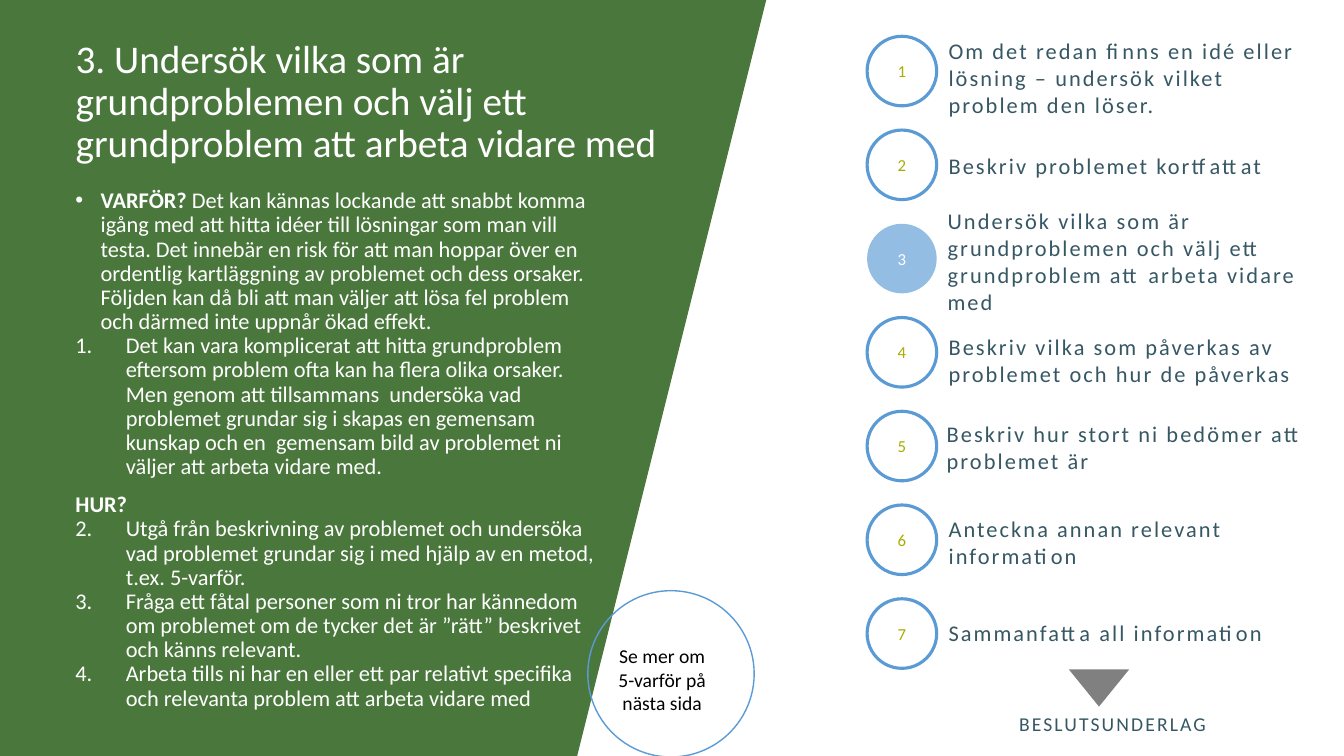
import pptx
import pptx.util
import pptx.dml.color
import pptx.enum.shapes
import pptx.enum.text
import pptx.oxml.ns
import lxml.etree

Inches = pptx.util.Inches
Pt = pptx.util.Pt
Shape = pptx.enum.shapes.MSO_SHAPE
Align = pptx.enum.text.PP_ALIGN
Anchor = pptx.enum.text.MSO_ANCHOR
qn = pptx.oxml.ns.qn

COLOURS = {
    "green": "4A773C",
    "blue": "5B9BD5",
    "slate": "365764",
    "lime": "A8AD00",
    "grey": "808080",
    "white": "FFFFFF",
    "black": "000000",
}

TITLE = "3. Undersök vilka som är grundproblemen och välj ett grundproblem att arbeta vidare med"

BODY = [
    ("dot", "VARFÖR? ", "Det kan kännas lockande att snabbt komma igång med att hitta idéer till lösningar som man vill testa. Det innebär en risk för att man hoppar över en ordentlig kartläggning av problemet och dess orsaker. Följden kan då bli att man väljer att lösa fel problem och därmed inte uppnår ökad effekt."),
    (1, "", "Det kan vara komplicerat att hitta grundproblem eftersom problem ofta kan ha flera olika orsaker. Men genom att tillsammans  undersöka vad problemet grundar sig i skapas en gemensam kunskap och en  gemensam bild av problemet ni väljer att arbeta vidare med."),
    (None, "HUR?", ""),
    (2, "", "Utgå från beskrivning av problemet och undersöka vad problemet grundar sig i med hjälp av en metod, t.ex. 5-varför."),
    (2, "", "Fråga ett fåtal personer som ni tror har kännedom om problemet om de tycker det är ”rätt” beskrivet och känns relevant."),
    (2, "", "Arbeta tills ni har en eller ett par relativt specifika och relevanta problem att arbeta vidare med"),
]

STEPS = [
    (9.31, 0.32, 3.8, 0.91, "Om det redan finns en idé eller lösning – undersök vilket problem den löser."),
    (9.31, 1.46, 3.46, 0.37, "Beskriv problemet kortfattat"),
    (9.3, 2.01, 3.88, 1.45, "Undersök vilka som är grundproblemen och välj ett grundproblem att arbeta vidare med"),
    (9.31, 3.26, 3.87, 0.64, "Beskriv vilka som påverkas av problemet och hur de påverkas"),
    (9.29, 4.12, 3.82, 0.64, "Beskriv hur stort ni bedömer att problemet är"),
    (9.31, 5.06, 3.82, 0.64, "Anteckna annan relevant information"),
    (9.31, 6.09, 3.8, 0.37, "Sammanfatta all information"),
]
CURRENT_STEP = 3
FIRST_TOP, STEP_GAP = 0.36, 0.93


class SlideBuilder:
    font = "Calibri"

    def __init__(self, page):
        self.page = page

    def colour(self, name):
        return pptx.dml.color.RGBColor.from_string(COLOURS[name])

    def style(self, para, size, colour, align=Align.LEFT, spacing=None):
        para.alignment = align
        para.font.name = self.font
        para.font.size = Pt(size)
        para.font.color.rgb = self.colour(colour)
        if spacing:
            para.font._element.set("spc", str(int(spacing * 100)))

    def title(self, box, text):
        title = self.page.shapes.title
        title.left, title.top, title.width, title.height = map(Inches, box)
        frame = title.text_frame
        frame.text = text
        frame.auto_size = pptx.enum.text.MSO_AUTO_SIZE.NONE
        frame.vertical_anchor = Anchor.BOTTOM
        self.style(frame.paragraphs[0], 28, "white")
        frame.paragraphs[0].line_spacing = 0.9

    def shape(self, kind, box, fill=None, line=None, weight=1, opacity=None):
        shape = self.page.shapes.add_shape(kind, *map(Inches, box))
        shape.shadow.inherit = False
        if fill:
            shape.fill.solid()
            shape.fill.fore_color.rgb = self.colour(fill)
        else:
            shape.fill.background()
        if opacity:
            tint = shape.fill._xPr.find(qn("a:solidFill"))[0]
            lxml.etree.SubElement(tint, qn("a:alpha"), val=str(opacity * 1000))
        if line:
            shape.line.color.rgb = self.colour(line)
            shape.line.width = Pt(weight)
        else:
            shape.line.fill.background()
        return shape

    def send_to_back(self, shape):
        self.page.shapes._spTree.insert(2, shape._element)

    def text(self, box, lines, size, colour, align=Align.LEFT, spacing=None):
        frame = self.page.shapes.add_textbox(*map(Inches, box)).text_frame
        frame.word_wrap = True
        frame.text = "\n".join(lines)
        for para in frame.paragraphs:
            self.style(para, size, colour, align, spacing)

    def number(self, number, left, top, active):
        circle = self.shape(
            Shape.OVAL, (left, top, 0.69, 0.69),
            "blue" if active else "white", None if active else "blue", 2.25, 65)
        frame = circle.text_frame
        frame.vertical_anchor = Anchor.MIDDLE
        frame.text = str(number)
        self.style(frame.paragraphs[0], 12, "white" if active else "lime", Align.CENTER)

    def bullet(self, para, marker):
        props = para._p.get_or_add_pPr()
        indent = 0.25 if marker == "dot" else 0.5
        props.set("marL", str(Inches(indent)))
        props.set("indent", str(-Inches(indent)))
        if marker == "dot":
            lxml.etree.SubElement(props, qn("a:buFont"), typeface="Arial")
            lxml.etree.SubElement(props, qn("a:buChar"), char="•")
        else:
            lxml.etree.SubElement(
                props, qn("a:buAutoNum"), type="arabicPeriod", startAt=str(marker))

    def body(self, box, items):
        frame = self.page.shapes.add_textbox(*map(Inches, box)).text_frame
        frame.word_wrap = True
        for index, (marker, strong, plain) in enumerate(items):
            para = frame.add_paragraph() if index else frame.paragraphs[0]
            para.line_spacing = 0.9
            para.space_before = Pt(0 if isinstance(marker, int) else 10)
            if marker:
                self.bullet(para, marker)
            self.style(para, 16, "white")
            for words, bold in ((strong, True), (plain, False)):
                if words:
                    span = para.add_run()
                    span.text = words
                    span.font.bold = bold


def main():
    deck = pptx.Presentation()
    deck.slide_width, deck.slide_height = Inches(13.33), Inches(7.5)
    builder = SlideBuilder(deck.slides.add_slide(deck.slide_layouts[5]))

    panel = builder.shape(Shape.PARALLELOGRAM, (-2.07, -0.04, 9.68, 7.87), "green")
    builder.send_to_back(panel)
    builder.title((0.65, 0.32, 6.41, 1.38), TITLE)
    builder.body((0.65, 1.83, 5.4, 5.29), BODY)

    builder.shape(Shape.OVAL, (5.83, 5.86, 1.65, 1.65), line="blue")
    builder.text((5.57, 6.34, 2.04, 0.81),
                 ["Se mer om ", "5-varför på ", "nästa sida "], 14, "black", Align.CENTER)

    for index, (left, top, width, height, words) in enumerate(STEPS):
        number = index + 1
        builder.number(number, 8.6, FIRST_TOP + index * STEP_GAP, number == CURRENT_STEP)
        builder.text((left, top, width, height), [words], 16, "slate", spacing=1.5)

    arrow = builder.shape(Shape.ISOSCELES_TRIANGLE, (10.6, 6.64, 0.6, 0.37), "grey")
    arrow.rotation = 180
    builder.text((9.65, 7.01, 2.77, 0.34), ["BESLUTSUNDERLAG"], 14, "slate", Align.CENTER, 1.5)
    deck.save("out.pptx")


if __name__ == "__main__":
    main()
